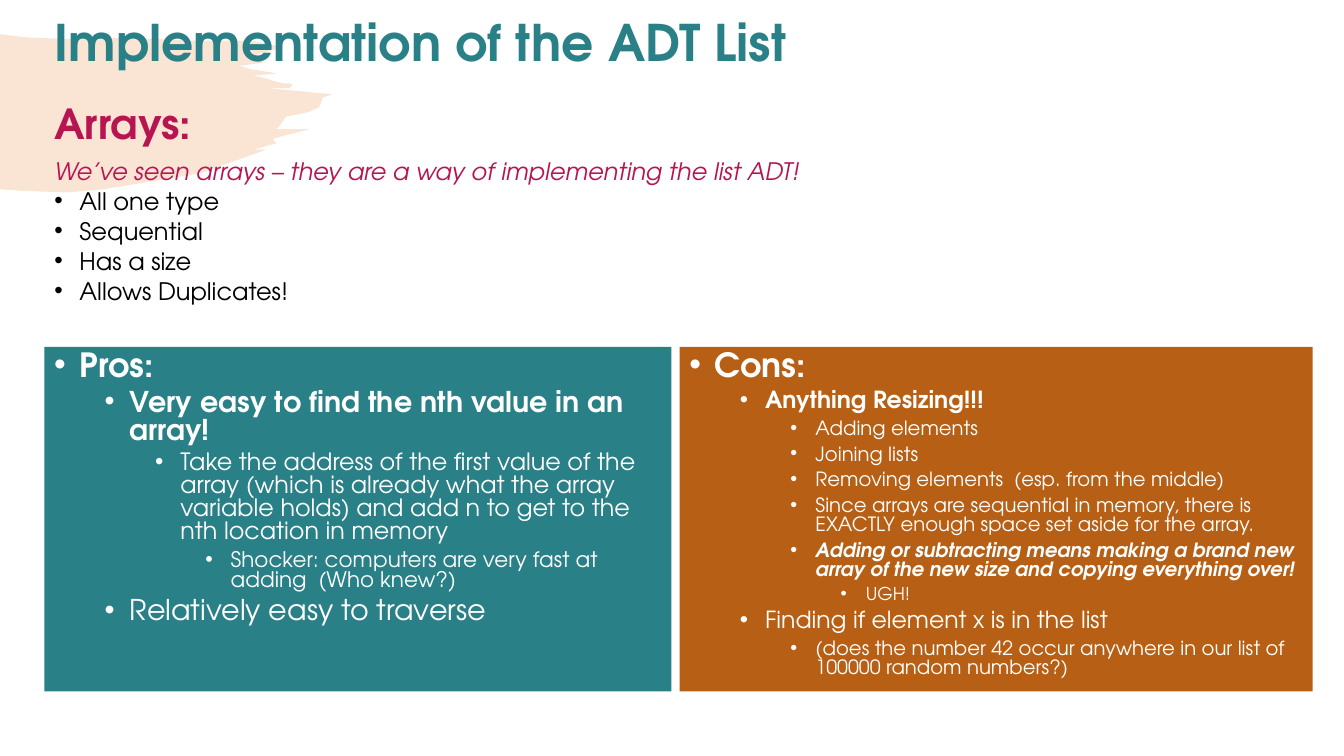
from lxml import etree
from pptx import Presentation
from pptx import util as u
from pptx.dml.color import RGBColor
from pptx.enum import shapes, text
from pptx.oxml.ns import qn

FONT = "TeX Gyre Adventor"
COLORS = {"teal": "298087", "rust": "B76015", "crimson": "B71551",
          "brush": "E78129", "black": "000000", "white": "FFFFFF"}
WIDTH, HEIGHT = u.Inches(13.33), u.Inches(7.5)

BRUSH = [(0, 0), (8, 2), (20, 3), (31, 2), (46, 3), (59, 4), (75, 4), (85, 8),
         (82, 10), (77, 13), (77, 15), (78, 16), (79, 18), (72, 20), (75, 22),
         (78, 23), (81, 24), (83, 25), (76, 26), (80, 28), (83, 30), (85, 31),
         (87, 31), (88, 32), (87, 34), (86, 34), (80, 34), (100, 38), (97, 40),
         (96, 46), (93, 49), (91, 50), (86, 52), (85, 55), (84, 58), (83, 60),
         (93, 60), (82, 66), (83, 69), (76, 73), (80, 73), (60, 88), (31, 98),
         (20, 100), (7, 99), (0, 98)]

PROS = [
    (0, "Pros:", 23.8, "b"),
    (1, "Very easy to find the nth value in an array!", 20.4, "b"),
    (2, "Take the address of the first value of the array (which is already "
        "what the array variable holds) and add n to get to the nth location "
        "in memory", 17, ""),
    (3, "Shocker: computers are very fast at adding  (Who knew?)", 15.3, ""),
    (1, "Relatively easy to traverse", 20.4, ""),
]
CONS = [
    (0, "Cons:", 23.8, "b"),
    (1, "Anything Resizing!!!", 16.8, "b"),
    (2, "Adding elements", 14, ""),
    (2, "Joining lists", 14, ""),
    (2, "Removing elements  (esp. from the middle)", 14, ""),
    (2, "Since arrays are sequential in memory, there is EXACTLY enough space "
        "set aside for the array.", 14, ""),
    (2, "Adding or subtracting means making a brand new array of the new size "
        "and copying everything over!", 14, "bi"),
    (3, "UGH!", 12.6, ""),
    (1, "Finding if element x is in the list", 16.8, ""),
    (2, "(does the number 42 occur anywhere in our list of 100000 random "
        "numbers?)", 14, ""),
]
FEATURES = ["All one type", "Sequential", "Has a size", "Allows Duplicates!"]


def rgb(name):
    """Return the named palette colour."""
    return RGBColor.from_string(COLORS[name])


def area(x, y, w, h):
    """Turn percentages of the slide into a box in EMU."""
    return (int(WIDTH * x / 100), int(HEIGHT * y / 100),
            int(WIDTH * w / 100), int(HEIGHT * h / 100))


def write(p, words, size, color, style="", spacing=0.8, before=0):
    """Fill a paragraph with one styled run."""
    p.alignment = text.PP_ALIGN.LEFT
    p.line_spacing = spacing
    p.space_before = u.Pt(before)
    r = p.add_run()
    r.text = words
    r.font.name, r.font.size = FONT, u.Pt(size)
    r.font.bold, r.font.italic = "b" in style, "i" in style
    r.font.color.rgb = rgb(color)


def bullet(p, level):
    """Give a paragraph a hanging bullet at the given level."""
    p.level = level
    pPr = p._p.get_or_add_pPr()
    pPr.set("marL", str(u.Inches(0.25 + 0.5 * level)))
    pPr.set("indent", str(-u.Inches(0.25)))
    etree.SubElement(pPr, qn("a:buFont")).set("typeface", "Arial")
    etree.SubElement(pPr, qn("a:buChar")).set("char", "•")


def next_paragraph(tf):
    """Return the first paragraph while it is empty, then a new one."""
    return tf.add_paragraph() if tf.paragraphs[0].runs else tf.paragraphs[0]


def add_brush(s, box):
    """Draw the pale brush stroke inside the box."""
    x, y, w, h = box
    points = [(x + w * px / 100, y + h * py / 100) for px, py in BRUSH]
    builder = s.shapes.build_freeform(*points[0])
    builder.add_line_segments(points[1:], close=True)
    sp = builder.convert_to_shape()
    sp.shadow.inherit = False
    sp.fill.solid()
    sp.fill.fore_color.rgb = rgb("brush")
    sp.line.fill.background()
    fill = sp._element.spPr.find(qn("a:solidFill"))
    etree.SubElement(fill[0], qn("a:alpha")).set("val", "20000")


def add_title(s, box):
    """Place the slide title."""
    tf = s.shapes.add_textbox(*box).text_frame
    tf.word_wrap = True
    tf.vertical_anchor = text.MSO_ANCHOR.MIDDLE
    write(tf.paragraphs[0], "Implementation of the ADT List", 36, "teal", "b", 0.9)


def add_intro(s, box):
    """Place the heading, the remark and the list of features."""
    tf = s.shapes.add_textbox(*box).text_frame
    tf.word_wrap = True
    write(next_paragraph(tf), "Arrays:", 29.6, "crimson", "b", before=10)
    write(next_paragraph(tf), "We’ve seen arrays – they are a way of "
          "implementing the list ADT!", 17.2, "crimson", "i", before=10)
    for feature in FEATURES:
        p = next_paragraph(tf)
        write(p, feature, 17.2, "black", before=5)
        bullet(p, 0)


def add_panel(s, box, color, items):
    """Draw a filled panel holding a multilevel bullet list."""
    sp = s.shapes.add_shape(shapes.MSO_SHAPE.RECTANGLE, *box)
    sp.shadow.inherit = False
    sp.fill.solid()
    sp.fill.fore_color.rgb = rgb(color)
    sp.line.fill.background()
    tf = sp.text_frame
    tf.word_wrap = True
    tf.vertical_anchor = text.MSO_ANCHOR.TOP
    for level, words, size, style in items:
        p = next_paragraph(tf)
        write(p, words, size, "white", style, before=5 if level else 10)
        bullet(p, level)


def main():
    """Build the slide and save it."""
    prs = Presentation()
    prs.slide_width, prs.slide_height = WIDTH, HEIGHT
    s = prs.slides.add_slide(prs.slide_layouts[6])
    add_brush(s, area(0, 4.53, 24.76, 20.93))
    add_title(s, area(3.3, 1.33, 70.52, 9.2))
    add_intro(s, area(3.3, 13.6, 86.87, 29.2))
    add_panel(s, area(3.3, 45.87, 46.66, 45.6), "teal", PROS)
    add_panel(s, area(50.56, 45.87, 47.11, 45.6), "rust", CONS)
    prs.save("out.pptx")


if __name__ == "__main__":
    main()
